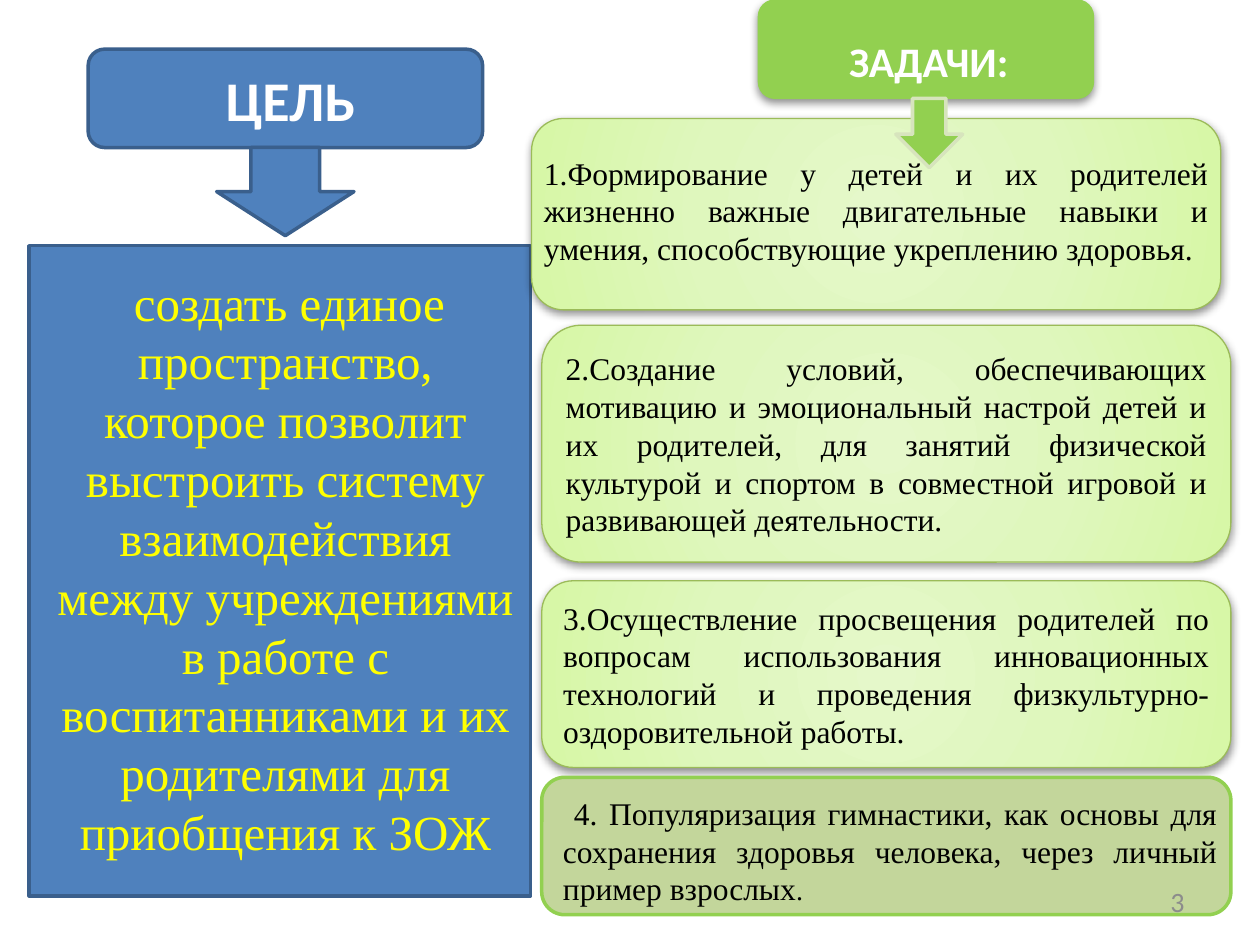
import dataclasses
from typing import Optional

import pptx
import pptx.dml.color
import pptx.enum.shapes
import pptx.enum.text
import pptx.oxml
import pptx.oxml.ns
import pptx.util

Pt = pptx.util.Pt
RGBColor = pptx.dml.color.RGBColor
MSO_SHAPE = pptx.enum.shapes.MSO_SHAPE
PP_ALIGN = pptx.enum.text.PP_ALIGN
MSO_ANCHOR = pptx.enum.text.MSO_ANCHOR

BLUE = RGBColor(0x4F, 0x81, 0xBD)
DARK_BLUE = RGBColor(0x3A, 0x5F, 0x8C)
GREEN = RGBColor(0x92, 0xD0, 0x50)
OLIVE = RGBColor(0x9B, 0xBB, 0x59)
SAGE = RGBColor(0xC3, 0xD6, 0x9B)
PALE_GREEN = RGBColor(0xD7, 0xE4, 0xBD)
YELLOW = RGBColor(0xFF, 0xFF, 0x00)
WHITE = RGBColor(0xFF, 0xFF, 0xFF)
BLACK = RGBColor(0x00, 0x00, 0x00)
GREY = RGBColor(0x8C, 0x8C, 0x8C)
GLOW_STOPS = (
    (0, RGBColor(0xE5, 0xF8, 0xCA)),
    (50, RGBColor(0xDF, 0xF7, 0xBD)),
    (97, RGBColor(0xD7, 0xF7, 0xA7)),
    (100, RGBColor(0xD5, 0xF9, 0x9E)),
)

HEADING_FONT = "Calibri"
BODY_FONT = "Times New Roman"


@dataclasses.dataclass(frozen=True)
class Box:
    """Position and size in points."""
    left: float
    top: float
    width: float
    height: float

    def lengths(self) -> tuple:
        return tuple(Pt(v) for v in dataclasses.astuple(self))


@dataclasses.dataclass(frozen=True)
class Run:
    text: str
    size: float = 18
    color: RGBColor = BLACK
    font: str = BODY_FONT
    bold: bool = False


@dataclasses.dataclass(frozen=True)
class Panel:
    """A filled outline; without a fill colour it gets the radial glow."""
    kind: MSO_SHAPE
    box: Box
    line: RGBColor
    fill: Optional[RGBColor] = None
    line_width: float = 2
    shadow: bool = False


def add_glow(shape) -> None:
    stops = "".join(
        f'<a:gs pos="{position * 1000}"><a:srgbClr val="{color}"/></a:gs>'
        for position, color in GLOW_STOPS
    )
    gradient = pptx.oxml.parse_xml(
        f'<a:gradFill {pptx.oxml.ns.nsdecls("a")} rotWithShape="1">'
        f'<a:gsLst>{stops}</a:gsLst><a:path path="circle">'
        '<a:fillToRect l="50000" t="50000" r="50000" b="50000"/>'
        '</a:path></a:gradFill>'
    )
    shape._element.spPr.find(pptx.oxml.ns.qn("a:prstGeom")).addnext(gradient)


def add_drop_shadow(shape) -> None:
    effects = shape._element.spPr.find(pptx.oxml.ns.qn("a:effectLst"))
    effects.append(pptx.oxml.parse_xml(
        f'<a:outerShdw {pptx.oxml.ns.nsdecls("a")} blurRad="{Pt(5)}" '
        f'dist="{Pt(2)}" dir="5400000" rotWithShape="0">'
        '<a:srgbClr val="000000"><a:alpha val="43000"/></a:srgbClr>'
        '</a:outerShdw>'
    ))


def add_panel(slide, panel: Panel):
    shape = slide.shapes.add_shape(panel.kind, *panel.box.lengths())
    shape.line.color.rgb = panel.line
    shape.line.width = Pt(panel.line_width)
    shape.shadow.inherit = False
    if panel.fill is None:
        add_glow(shape)
    else:
        shape.fill.solid()
        shape.fill.fore_color.rgb = panel.fill
    if panel.shadow:
        add_drop_shadow(shape)
    return shape


def write(shape, runs: tuple, align: PP_ALIGN, anchor: MSO_ANCHOR) -> None:
    frame = shape.text_frame
    frame.word_wrap = True
    frame.vertical_anchor = anchor
    paragraph = frame.paragraphs[0]
    paragraph.alignment = align
    for item in runs:
        run = paragraph.add_run()
        run.text = item.text
        run.font.size = Pt(item.size)
        run.font.name = item.font
        run.font.bold = item.bold
        run.font.color.rgb = item.color


def add_text(slide, box: Box, runs: tuple, align: PP_ALIGN,
             anchor: MSO_ANCHOR = MSO_ANCHOR.TOP) -> None:
    write(slide.shapes.add_textbox(*box.lengths()), runs, align, anchor)


def task_panel(box: Box) -> Panel:
    return Panel(MSO_SHAPE.ROUNDED_RECTANGLE, box, OLIVE, line_width=0.75, shadow=True)


def draw_goal(slide) -> None:
    for kind, box in (
        (MSO_SHAPE.ROUNDED_RECTANGLE, Box(50.4, 28.1, 225.4, 56.2)),
        (MSO_SHAPE.DOWN_ARROW, Box(123.8, 84.3, 78.5, 50.4)),
        (MSO_SHAPE.RECTANGLE, Box(16.6, 140.4, 286.6, 371.5)),
    ):
        add_panel(slide, Panel(kind, box, DARK_BLUE, BLUE))
    add_text(slide, Box(95.8, 33.8, 140.4, 46.1),
             (Run("ЦЕЛЬ", 32, WHITE, HEADING_FONT, True),), PP_ALIGN.CENTER)
    goal = Run("создать единое пространство, которое позволит выстроить систему "
               "взаимодействия между учреждениями в работе с воспитанниками и их "
               "родителями для приобщения к ЗОЖ", 28, YELLOW)
    add_text(slide, Box(22.3, 151.9, 281.5, 346.3), (Run(" "), goal), PP_ALIGN.CENTER)


def draw_tasks(slide) -> None:
    left, width = 309.6, 393.8
    for top, height, task in (
        (185.8, 135.4, "2.Создание условий, обеспечивающих мотивацию и эмоциональный "
                       "настрой детей и их родителей, для занятий физической культурой "
                       "и спортом в совместной игровой и развивающей деятельности."),
        (331.9, 106.6, "3.Осуществление просвещения родителей по вопросам использования "
                       "инновационных технологий и проведения "
                       "физкультурно-оздоровительной работы."),
    ):
        panel = add_panel(slide, task_panel(Box(left, top, width, height)))
        write(panel, (Run(task),), PP_ALIGN.JUSTIFY, MSO_ANCHOR.MIDDLE)

    add_panel(slide, task_panel(Box(303.8, 67.7, width, 109.4)))
    add_text(slide, Box(303.8, 84.2, width, 116.6),
             (Run("1.Формирование у детей и их родителей жизненно важные двигательные "
                  "навыки и умения, способствующие укреплению здоровья."),),
             PP_ALIGN.JUSTIFY)

    add_panel(slide, Panel(MSO_SHAPE.ROUNDED_RECTANGLE,
                           Box(left, 444.2, width, 78.5), GREEN, SAGE))
    add_text(slide, Box(314.6, 450, 388.1, 72.7),
             (Run(" ", font=HEADING_FONT),
              Run("4. Популяризация гимнастики, как основы для сохранения здоровья "
                  "человека, через личный пример взрослых"),
              Run(".", 16)),
             PP_ALIGN.JUSTIFY)


def draw_tasks_heading(slide) -> None:
    add_panel(slide, Panel(MSO_SHAPE.ROUNDED_RECTANGLE, Box(433.4, 0, 191.5, 56.2),
                           GREEN, GREEN, 0.75, True))
    add_panel(slide, Panel(MSO_SHAPE.DOWN_ARROW, Box(511.9, 56.2, 38.2, 39.6),
                           PALE_GREEN, GREEN))
    add_text(slide, Box(478.1, 16.6, 106.6, 36),
             (Run("ЗАДАЧИ:", 24, WHITE, HEADING_FONT, True),), PP_ALIGN.LEFT)


def main() -> None:
    deck = pptx.Presentation()
    deck.slide_width, deck.slide_height = Pt(720), Pt(540)
    slide = deck.slides.add_slide(deck.slide_layouts.get_by_name("Blank"))
    draw_goal(slide)
    draw_tasks(slide)
    draw_tasks_heading(slide)
    add_text(slide, Box(516.2, 500.4, 167.8, 28.8),
             (Run("3", 16, GREY, HEADING_FONT),), PP_ALIGN.RIGHT, MSO_ANCHOR.MIDDLE)
    deck.save("out.pptx")


if __name__ == "__main__":
    main()
